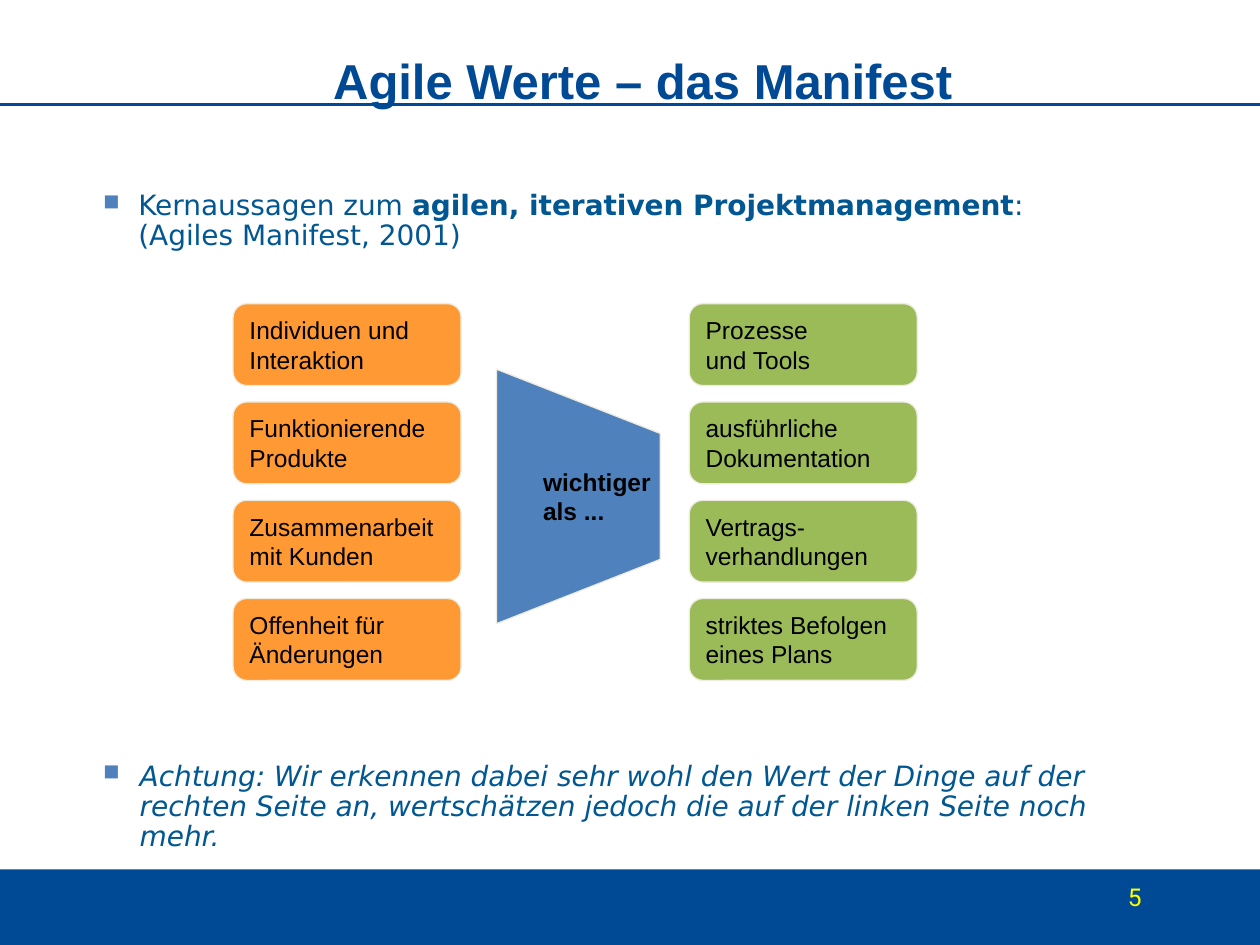
from lxml.etree import SubElement
from pptx import Presentation
from pptx.dml.color import RGBColor
from pptx.enum.shapes import MSO_CONNECTOR, MSO_SHAPE
from pptx.enum.text import MSO_ANCHOR, PP_ALIGN
from pptx.oxml.ns import qn
from pptx.util import Inches, Pt

NAVY = RGBColor(0x00, 0x49, 0x94)
TEXT_BLUE = RGBColor(0x00, 0x57, 0x92)
STEEL = RGBColor(0x4F, 0x81, 0xBD)
ORANGE = RGBColor(0xFF, 0x99, 0x33)
GREEN = RGBColor(0x9B, 0xBB, 0x59)
CREAM = RGBColor(0xEE, 0xEC, 0xE1)
YELLOW = RGBColor(0xFF, 0xFF, 0x00)
BLACK = RGBColor(0x00, 0x00, 0x00)

VALUE_PAIRS = [
    ("Individuen und\nInteraktion", "Prozesse\vund Tools"),
    ("Funktionierende\nProdukte", "ausführliche\vDokumentation"),
    ("Zusammenarbeit\nmit Kunden", "Vertrags-\vverhandlungen"),
    ("Offenheit für\vÄnderungen", "striktes Befolgen\neines Plans"),
]


def set_font(font, size=14, name="Arial", color=BLACK, bold=False, italic=False):
    font.size, font.name = Pt(size), name
    font.bold, font.italic = bold, italic
    font.color.rgb = color


def write(frame, text, align=PP_ALIGN.LEFT, anchor=MSO_ANCHOR.MIDDLE, **style):
    frame.text = text
    frame.word_wrap = True
    frame.vertical_anchor = anchor
    for paragraph in frame.paragraphs:
        paragraph.alignment = align
        for span in paragraph.runs:
            set_font(span.font, **style)


def paint(shape, fill, outline=None):
    shape.shadow.inherit = False
    shape.fill.solid()
    shape.fill.fore_color.rgb = fill
    if outline is None:
        shape.line.fill.background()
    else:
        shape.line.color.rgb = outline
        shape.line.width = Pt(0.75)


def add_frame(page):
    """Rule below the title and band at the foot."""
    rule = page.shapes.add_connector(
        MSO_CONNECTOR.STRAIGHT, 0, Inches(0.83), Inches(10), Inches(0.83))
    rule.line.color.rgb = NAVY
    rule.line.width = Pt(2)
    SubElement(rule._element.spPr, qn("a:effectLst"))
    band = page.shapes.add_shape(
        MSO_SHAPE.RECTANGLE, 0, Inches(6.9), Inches(10), Inches(0.6))
    paint(band, NAVY)


def add_title(page, text):
    title = page.shapes.title
    title.left, title.top = Inches(1.06), Inches(0.36)
    title.width, title.height = Inches(8.19), Inches(0.63)
    frame = title.text_frame
    frame.margin_left = frame.margin_right = frame.margin_bottom = 0
    frame.margin_top = Inches(0.04)
    write(frame, text, align=PP_ALIGN.CENTER, anchor=MSO_ANCHOR.TOP,
          size=28, color=NAVY, bold=True)


def add_bullet(page, left, top, width, height, lines, indent, hang, italic=False):
    """Each line is a list of (text, bold) spans."""
    box = page.shapes.add_textbox(
        Inches(left), Inches(top), Inches(width), Inches(height))
    box.text_frame.word_wrap = True
    paragraph = box.text_frame.paragraphs[0]
    paragraph.line_spacing = 0.9
    properties = paragraph._p.get_or_add_pPr()
    properties.set("marL", str(Inches(indent)))
    properties.set("indent", str(-Inches(hang)))
    color = SubElement(properties, qn("a:buClr"))
    SubElement(color, qn("a:srgbClr"), val=str(STEEL))
    SubElement(properties, qn("a:buSzPct"), val="80000")
    SubElement(properties, qn("a:buChar"), char="■")
    for number, line in enumerate(lines):
        if number:
            paragraph.add_line_break()
        for text, bold in line:
            span = paragraph.add_run()
            span.text = text
            set_font(span.font, size=16, name="DejaVu Sans", color=TEXT_BLUE,
                     bold=bold, italic=italic)


def add_value(page, left, top, text, fill):
    card = page.shapes.add_shape(
        MSO_SHAPE.ROUNDED_RECTANGLE, Inches(left), Inches(top),
        Inches(1.81), Inches(0.65))
    paint(card, fill, CREAM)
    write(card.text_frame, text)


def add_funnel(page, text):
    """Trapezoid narrowing from the left values to the right ones."""
    builder = page.shapes.build_freeform(Inches(3.94), Inches(4.95))
    corners = [(5.24, 4.44), (5.24, 3.44), (3.94, 2.93)]
    builder.add_line_segments([(Inches(x), Inches(y)) for x, y in corners])
    funnel = builder.convert_to_shape()
    paint(funnel, STEEL, CREAM)
    funnel.text_frame.margin_left = Inches(0.37)
    funnel.text_frame.margin_right = 0
    write(funnel.text_frame, text, bold=True)


def add_page_number(page, number):
    box = page.shapes.add_textbox(
        Inches(7.72), Inches(6.95), Inches(1.34), Inches(0.4))
    box.text_frame.margin_right = 0
    write(box.text_frame, number, align=PP_ALIGN.RIGHT, anchor=MSO_ANCHOR.TOP,
          name="Roboto", color=YELLOW)


def main():
    deck = Presentation()
    deck.slide_width, deck.slide_height = Inches(10), Inches(7.5)
    page = deck.slides.add_slide(deck.slide_layouts[5])

    add_frame(page)
    add_title(page, "Agile Werte – das Manifest ")

    # Opening statement
    add_bullet(page, 0.51, 1.47, 9.07, 0.59, [
        [("Kernaussagen zum ", False),
         ("agilen, iterativen Projektmanagement", True), (":", False)],
        [("(Agiles Manifest, 2001)", False)],
    ], indent=0.49, hang=0.28)

    # Paired values
    for row, (preferred, other) in enumerate(VALUE_PAIRS):
        top = 2.41 + 0.78 * row
        add_value(page, 1.85, top, preferred, ORANGE)
        add_value(page, 5.47, top, other, GREEN)
    add_funnel(page, "wichtiger\nals ...")

    # Closing remark
    add_bullet(page, 0.42, 6, 8.75, 0.83, [
        [("Achtung: Wir erkennen dabei sehr wohl den Wert der Dinge auf der "
          "rechten Seite an, wertschätzen jedoch die auf der linken Seite "
          "noch mehr.", False)],
    ], indent=0.59, hang=0.29, italic=True)

    add_page_number(page, "5")
    deck.save("out.pptx")


if __name__ == "__main__":
    main()
